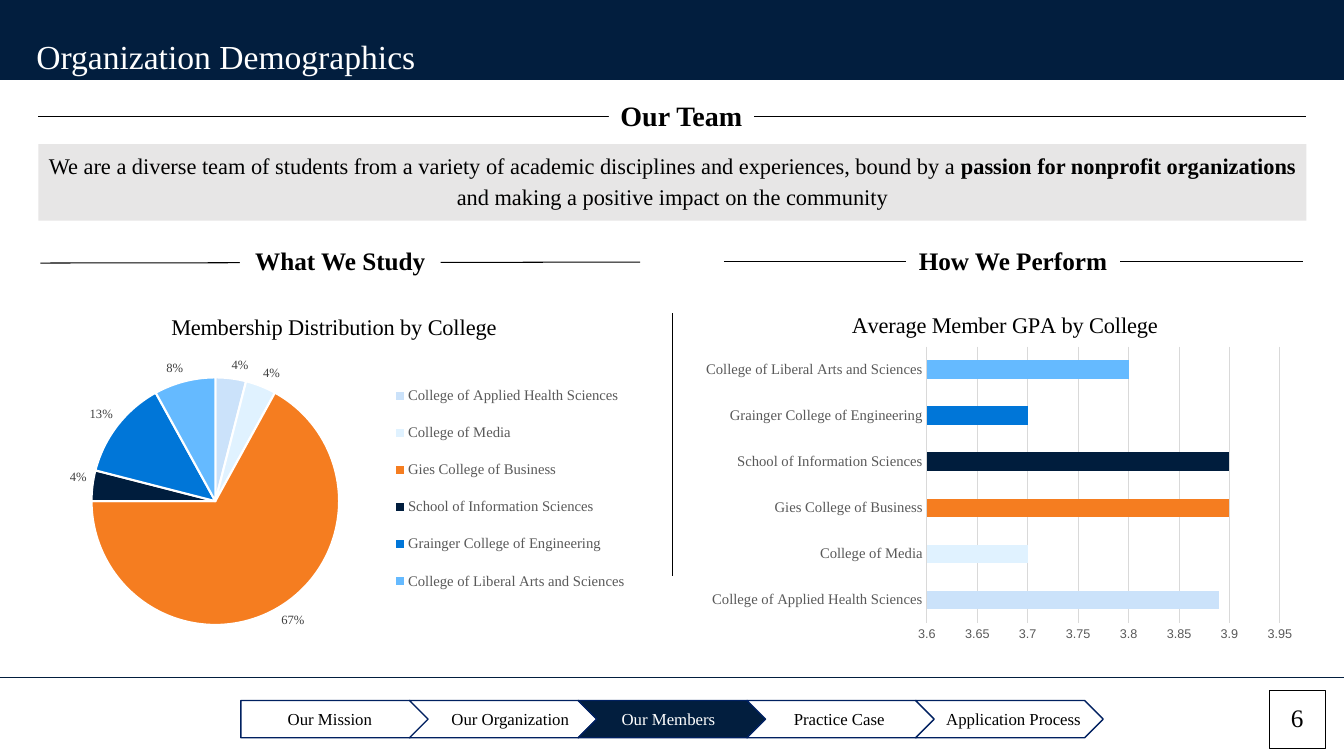
from dataclasses import dataclass

from lxml import etree
from pptx import Presentation
from pptx.chart.chart import Chart
from pptx.chart.data import CategoryChartData
from pptx.dml.color import RGBColor
from pptx.enum.chart import XL_CHART_TYPE, XL_LABEL_POSITION, XL_LEGEND_POSITION, XL_TICK_MARK
from pptx.enum.shapes import MSO_CONNECTOR, MSO_SHAPE
from pptx.enum.text import MSO_ANCHOR, PP_ALIGN
from pptx.oxml.ns import qn
from pptx.shapes.autoshape import Shape
from pptx.slide import Slide
from pptx.util import Pt

RECTANGLE, CHEVRON, PENTAGON = MSO_SHAPE.RECTANGLE, MSO_SHAPE.CHEVRON, MSO_SHAPE.PENTAGON
STRAIGHT = MSO_CONNECTOR.STRAIGHT
TOP, MIDDLE = MSO_ANCHOR.TOP, MSO_ANCHOR.MIDDLE
LEFT, CENTER = PP_ALIGN.LEFT, PP_ALIGN.CENTER
NO_TICK = XL_TICK_MARK.NONE

SERIF, SANS = "Times New Roman", "Arial"
NAVY, OUTLINE, BLACK, WHITE = "021E3E", "002060", "000000", "FFFFFF"
PANEL, GRID, CHART_GRAY, LABEL_GRAY = "E7E6E6", "D9D9D9", "595959", "404040"

Box = tuple[float, float, float, float]


@dataclass(frozen=True)
class TextRun:
    text: str
    size: float
    bold: bool = False
    color: str = BLACK


@dataclass(frozen=True)
class Heading:
    text: str
    size: float
    box: Box
    rule: Box


@dataclass(frozen=True)
class Step:
    label: str
    shift: float = 0
    current: bool = False


@dataclass(frozen=True)
class College:
    name: str
    share: float
    gpa: float
    color: str


HEADINGS = [
    Heading("Our Team", 20, (434.9, 67, 103.7, 23.8), (27.4, 83.5, 933, 83.5)),
    Heading("What We Study", 18, (171.4, 172.1, 143.3, 23.8), (28.8, 187.9, 457.2, 187.2)),
    Heading("How We Perform", 18, (647.3, 172.1, 152.6, 23.8), (517, 186.5, 931, 186.5)),
]
STEPS = [
    Step("Our Mission"),
    Step("Our Organization", shift=5),
    Step("Our Members", shift=-2.5, current=True),
    Step("Practice Case", shift=-1),
    Step("Application Process", shift=3),
]
STEP_LEFT, STEP_TOP, STEP_WIDTH, STEP_HEIGHT, STEP_PITCH = 172, 500.4, 134, 26.6, 120.5
COLLEGES = [
    College("College of Applied Health Sciences", 0.04, 3.89, "CBE2FA"),
    College("College of Media", 0.04, 3.7, "E0F2FF"),
    College("Gies College of Business", 0.67, 3.9, "F57D20"),
    College("School of Information Sciences", 0.04, 3.9, "001D3D"),
    College("Grainger College of Engineering", 0.13, 3.7, "0076D8"),
    College("College of Liberal Arts and Sciences", 0.08, 3.8, "65BAFF"),
]


def rgb(value: str) -> RGBColor:
    return RGBColor.from_string(value)


def style_font(font, size: float, color: str, name: str = SERIF, bold: bool = False) -> None:
    font.name, font.size, font.bold = name, Pt(size), bold
    font.color.rgb = rgb(color)


def write(shape: Shape, runs: list[TextRun], align=CENTER, anchor=TOP,
          spacing: float = 1, insets: Box = (5, 3, 5, 3)) -> None:
    """Fill a shape with one paragraph; insets are left, top, right, bottom."""
    frame = shape.text_frame
    frame.word_wrap = True
    frame.vertical_anchor = anchor
    frame.margin_left, frame.margin_top, frame.margin_right, frame.margin_bottom = map(Pt, insets)
    paragraph = frame.paragraphs[0]
    paragraph.alignment, paragraph.line_spacing = align, spacing
    for item in runs:
        run = paragraph.add_run()
        run.text = item.text
        style_font(run.font, item.size, item.color, bold=item.bold)


def add_block(slide: Slide, box: Box, fill: str | None, line: str | None = None,
              width: float = 1, preset=RECTANGLE) -> Shape:
    shape = slide.shapes.add_shape(preset, *map(Pt, box))
    shape.shadow.inherit = False
    if fill:
        shape.fill.solid()
        shape.fill.fore_color.rgb = rgb(fill)
    else:
        shape.fill.background()
    if line:
        shape.line.color.rgb = rgb(line)
        shape.line.width = Pt(width)
    else:
        shape.line.fill.background()
    return shape


def add_rule(slide: Slide, ends: Box, color: str = BLACK, width: float = 0.75) -> None:
    rule = slide.shapes.add_connector(STRAIGHT, *map(Pt, ends))
    rule.line.color.rgb = rgb(color)
    rule.line.width = Pt(width)
    etree.SubElement(rule.element.spPr, qn("a:effectLst"))


def add_heading(slide: Slide, heading: Heading) -> None:
    add_rule(slide, heading.rule)
    write(add_block(slide, heading.box, WHITE), [TextRun(heading.text, heading.size, True)])


def add_step(slide: Slide, index: int, step: Step) -> None:
    box = (STEP_LEFT + index * STEP_PITCH, STEP_TOP, STEP_WIDTH, STEP_HEIGHT)
    shape = add_block(slide, box, NAVY if step.current else WHITE, OUTLINE,
                      preset=CHEVRON if index else PENTAGON)
    label = TextRun(step.label, 12, color=WHITE if step.current else BLACK)
    insets = (max(0, 2 * step.shift), 0, max(0, -2 * step.shift), 0)
    write(shape, [label], anchor=MIDDLE, insets=insets)


def place(part, index: int, **fractions: float) -> None:
    """Give a chart part a fixed place, as fractions of the chart's size."""
    for old in part.findall(qn("c:layout")):
        part.remove(old)
    layout = etree.Element(qn("c:layout"))
    part.insert(index, layout)
    manual = etree.SubElement(layout, qn("c:manualLayout"))
    if part.tag == qn("c:plotArea"):
        etree.SubElement(manual, qn("c:layoutTarget")).set("val", "inner")
    for axis in "xy":
        etree.SubElement(manual, qn(f"c:{axis}Mode")).set("val", "edge")
    for key, value in fractions.items():
        etree.SubElement(manual, qn(f"c:{key}")).set("val", str(value))


def add_college_chart(slide: Slide, kind, box: Box, title: str,
                      values: list[float], font: str) -> Chart:
    data = CategoryChartData()
    data.categories = [college.name for college in COLLEGES]
    data.add_series("Series 1", values)
    chart = slide.shapes.add_chart(kind, *map(Pt, box), data).chart
    style_font(chart.font, 10, BLACK, font)
    chart.has_title = True
    run = chart.chart_title.text_frame.paragraphs[0].add_run()
    run.text = title
    style_font(run.font, 16, BLACK)
    place(chart.chart_title._element, 1, x=0.25, y=0.05)
    for index, college in enumerate(COLLEGES):
        fill = chart.plots[0].series[0].points[index].format.fill
        fill.solid()
        fill.fore_color.rgb = rgb(college.color)
    return chart


def add_membership_pie(slide: Slide) -> None:
    chart = add_college_chart(slide, XL_CHART_TYPE.PIE, (5, 208.1, 457.9, 256.3),
                              "Membership Distribution by College",
                              [college.share for college in COLLEGES], SERIF)
    plot = chart.plots[0]
    plot.vary_by_categories = True
    for index in range(len(COLLEGES)):
        border = plot.series[0].points[index].format.line
        border.color.rgb = rgb(WHITE)
        border.width = Pt(1.5)
    labels = plot.series[0].data_labels
    labels.show_value = True
    labels.number_format, labels.number_format_is_linked = "0%", False
    labels.position = XL_LABEL_POSITION.OUTSIDE_END
    style_font(labels.font, 9, LABEL_GRAY)
    chart.has_legend = True
    chart.legend.position = XL_LEGEND_POSITION.RIGHT
    chart.legend.include_in_layout = False
    style_font(chart.legend.font, 10.5, CHART_GRAY)
    place(chart.legend._element, 1, x=0.59, y=0.21, w=0.39, h=0.68)
    place(chart.element.find(f".//{qn('c:plotArea')}"), 0, x=0.13, y=0.24, w=0.39, h=0.69)


def add_gpa_bars(slide: Slide) -> None:
    chart = add_college_chart(slide, XL_CHART_TYPE.BAR_STACKED, (496.8, 206.6, 434.9, 256.3),
                              "Average Member GPA by College",
                              [college.gpa for college in COLLEGES], SANS)
    chart.has_legend = False
    plot = chart.plots[0]
    plot.vary_by_categories = False
    plot.gap_width, plot.overlap = 150, 100
    names, scale = chart.category_axis, chart.value_axis
    names.major_tick_mark = scale.major_tick_mark = NO_TICK
    style_font(names.tick_labels.font, 10.5, CHART_GRAY)
    style_font(scale.tick_labels.font, 9, CHART_GRAY, SANS)
    scale.minimum_scale, scale.maximum_scale, scale.major_unit = 3.6, 3.95, 0.05
    scale.format.line.fill.background()
    for line in (names.format.line, scale.major_gridlines.format.line):
        line.color.rgb = rgb(GRID)
        line.width = Pt(0.75)
    place(chart.element.find(f".//{qn('c:plotArea')}"), 0, x=0.38, y=0.16, w=0.58, h=0.77)


def main() -> None:
    deck = Presentation()
    deck.slide_width, deck.slide_height = Pt(960), Pt(540)
    slide = deck.slides.add_slide(deck.slide_layouts[5])

    add_block(slide, (0, 0, 960, 57), NAVY)
    title = slide.shapes.title
    slide.shapes.element.append(title.element)
    title.left, title.top, title.width, title.height = map(Pt, (18.7, 25.2, 676, 34.6))
    write(title, [TextRun("Organization Demographics", 24, color=WHITE)],
          align=LEFT, spacing=0.9, insets=(7.2, 3.6, 7.2, 3.6))

    for heading in HEADINGS:
        add_heading(slide, heading)
    write(add_block(slide, (27.4, 103, 905.8, 54.7), PANEL), [
        TextRun("We are a diverse team of students from a variety of academic disciplines "
                "and experiences, bound by a ", 16),
        TextRun("passion for nonprofit organizations", 16, True),
        TextRun(" and making a positive impact on the community", 16),
    ], spacing=1.15)

    add_rule(slide, (480.2, 223.9, 480.2, 411.1))
    add_membership_pie(slide)
    add_gpa_bars(slide)

    add_rule(slide, (0, 484, 960, 484), NAVY, 1)
    for index, step in enumerate(STEPS):
        add_step(slide, index, step)
    page_number = add_block(slide, (906.5, 493.2, 40.3, 41.8), None, BLACK, 0.75)
    write(page_number, [TextRun("6", 18)], anchor=MIDDLE, spacing=0.9)
    deck.save("out.pptx")


if __name__ == "__main__":
    main()
